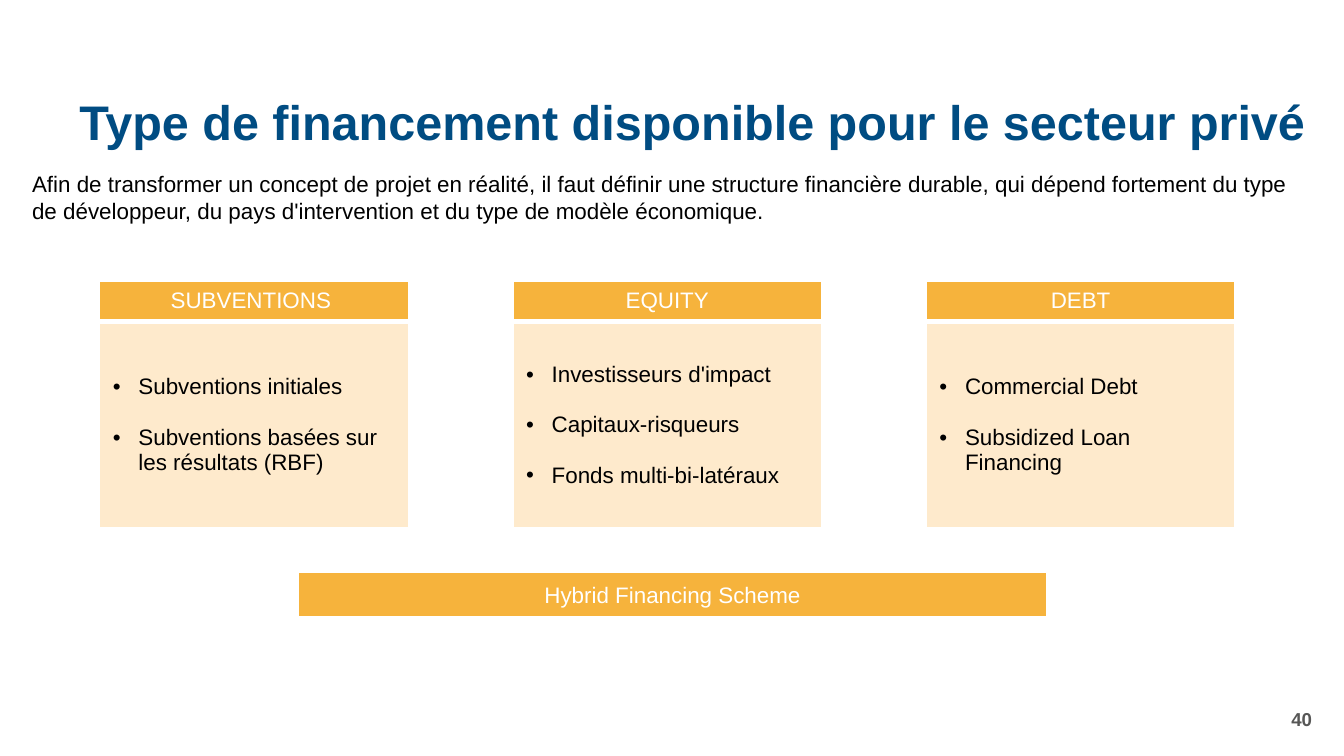
from pptx import Presentation
from pptx.dml.color import RGBColor
from pptx.enum.text import MSO_ANCHOR as Anchor, MSO_AUTO_SIZE as AutoSize, PP_ALIGN as Align
from pptx.oxml.ns import qn
from pptx.util import Inches, Pt
from lxml.etree import SubElement

COLORS = {
    "title": "004C82",
    "number": "575756",
    "header": "F6B33C",
    "body": "FEEACC",
    "white": "FFFFFF",
    "black": "000000",
}
FONT = "Arial"
HEADER_HEIGHT = 0.3
COLUMN_WIDTH = 2.3

FINANCING = [
    ("SUBVENTIONS ", ["Subventions initiales", "Subventions basées sur les résultats (RBF)"]),
    ("EQUITY", ["Investisseurs d'impact", "Capitaux-risqueurs", "Fonds multi-bi-latéraux"]),
    ("DEBT", ["Commercial Debt", "Subsidized Loan Financing"]),
]


def rgb(name):
    return RGBColor.from_string(COLORS[name])


def style(paragraph, size, color, bold=False, align=Align.LEFT):
    paragraph.alignment = align
    for run in paragraph.runs:
        run.font.name = FONT
        run.font.size = Pt(size)
        run.font.bold = bold
        run.font.color.rgb = rgb(color)


def add_bullet(paragraph):
    properties = paragraph._p.get_or_add_pPr()
    properties.set("marL", str(Inches(0.19)))
    properties.set("indent", str(-Inches(0.19)))
    SubElement(properties, qn("a:buFont"), typeface=FONT)
    SubElement(properties, qn("a:buChar"), char="•")


def paint_cell(cell, fill, bottom):
    properties = cell._tc.get_or_add_tcPr()
    for side, width in (("lnL", 1), ("lnR", 1), ("lnT", 1), ("lnB", bottom)):
        line = SubElement(properties, qn(f"a:{side}"), w=str(Pt(width)))
        solid = SubElement(line, qn("a:solidFill"))
        SubElement(solid, qn("a:srgbClr"), val=COLORS["white"])
    cell.fill.solid()
    cell.fill.fore_color.rgb = rgb(fill)
    cell.vertical_anchor = Anchor.MIDDLE


def add_financing_table(slide, box, heading, items=()):
    left, top, width, height = box
    rows = 2 if items else 1
    table = slide.shapes.add_table(rows, 1, *map(Inches, box)).table
    table.horz_banding = False
    header_height = HEADER_HEIGHT if items else height
    table.rows[0].height = Inches(header_height)
    header = table.cell(0, 0)
    paint_cell(header, "header", 3)
    header.text_frame.text = heading
    style(header.text_frame.paragraphs[0], 12, "white", align=Align.CENTER)
    if not items:
        return
    table.rows[1].height = Inches(height - header_height)
    body = table.cell(1, 0)
    paint_cell(body, "body", 1)
    body.text_frame.text = "\n".join(items)
    for index, paragraph in enumerate(body.text_frame.paragraphs):
        if index:
            paragraph.space_before = Pt(13.6)
        add_bullet(paragraph)
        style(paragraph, 12, "black")


def add_financing_columns(slide, box):
    left, top, width, height = box
    step = (width - COLUMN_WIDTH) / (len(FINANCING) - 1)
    for index, (heading, items) in enumerate(FINANCING):
        column = (left + index * step, top, COLUMN_WIDTH, height)
        add_financing_table(slide, column, heading, items)


def set_title(slide, box, text):
    title = slide.shapes.title
    title.left, title.top, title.width, title.height = map(Inches, box)
    frame = title.text_frame
    frame.text = text
    frame.auto_size = AutoSize.NONE
    frame.vertical_anchor = Anchor.MIDDLE
    frame.paragraphs[0].line_spacing = 0.9
    style(frame.paragraphs[0], 26, "title", bold=True)


def add_text(slide, box, text, size, color, bold=False, align=Align.LEFT, anchor=Anchor.TOP):
    frame = slide.shapes.add_textbox(*map(Inches, box)).text_frame
    frame.word_wrap = True
    frame.vertical_anchor = anchor
    frame.text = text
    style(frame.paragraphs[0], size, color, bold, align)


def main():
    deck = Presentation()
    deck.slide_width = Inches(10)
    deck.slide_height = deck.slide_width * 9 // 16
    slide = deck.slides.add_slide(deck.slide_layouts[5])
    set_title(slide, (0.49, 0.63, 9.37, 0.59),
              "Type de financement disponible pour le secteur privé")
    add_text(slide, (7.61, 5.2, 2.25, 0.3), "40", 10, "number",
             bold=True, align=Align.RIGHT, anchor=Anchor.MIDDLE)
    add_financing_columns(slide, (0.74, 2.09, 8.45, 1.84))
    add_text(slide, (0.14, 1.22, 9.72, 0.5),
             "Afin de transformer un concept de projet en réalité, il faut définir une "
             "structure financière durable, qui dépend fortement du type de développeur, "
             "du pays d'intervention et du type de modèle économique.", 12, "black")
    add_financing_table(slide, (2.22, 4.26, 5.57, 0.34), "Hybrid Financing Scheme")
    deck.save("out.pptx")


if __name__ == "__main__":
    main()
